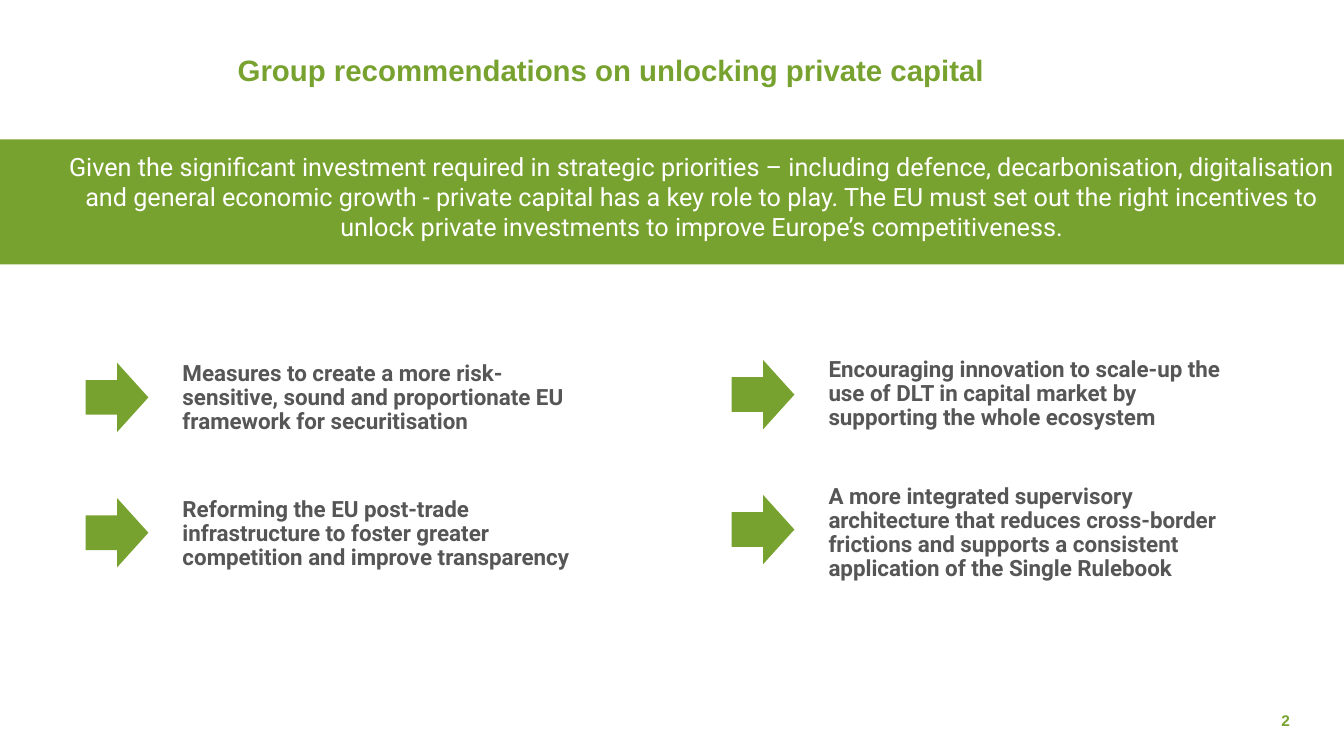
import dataclasses
import typing

import pptx
import pptx.dml.color
import pptx.enum.shapes
import pptx.enum.text
import pptx.oxml
import pptx.oxml.ns
import pptx.util

Cm = pptx.util.Cm
Align = pptx.enum.text.PP_ALIGN
Anchor = pptx.enum.text.MSO_ANCHOR

HUES = {"green": "78A22F", "gray": "565656", "white": "FFFFFF"}
TEXT_GAP = 2.44  # from arrow's left edge to its text


@dataclasses.dataclass
class Point:
    left: float
    top: float
    text_top: float
    high: float
    text: str


POINTS = [
    Point(2.16, 9.14, 9.12, 1.85,
          "Measures to create a more risk-sensitive, sound and proportionate EU "
          "framework for securitisation"),
    Point(2.16, 12.55, 12.55, 1.85,
          "Reforming the EU post-trade infrastructure to foster greater "
          "competition and improve transparency"),
    Point(18.44, 9.07, 9.02, 1.85,
          "Encouraging innovation to scale-up the use of DLT in capital market "
          "by supporting the whole ecosystem"),
    Point(18.44, 12.47, 12.22, 2.46,
          "A more integrated supervisory architecture that reduces cross-border "
          "frictions and supports a consistent application of the Single Rulebook"),
]


def color(name: str) -> pptx.dml.color.RGBColor:
    return pptx.dml.color.RGBColor.from_string(HUES[name])


def place(shape: typing.Any, left: float, top: float, wide: float, high: float) -> None:
    shape.left, shape.top = Cm(left), Cm(top)
    shape.width, shape.height = Cm(wide), Cm(high)


def write(shape: typing.Any, text: str, font: str, size: float, hue: str,
          bold: bool = True, align: Align = Align.LEFT, anchor: Anchor = Anchor.TOP,
          line: float = 1.0, inset: tuple[float, float] = (0, 0)) -> None:
    frame = shape.text_frame
    frame.word_wrap = True
    frame.auto_size = pptx.enum.text.MSO_AUTO_SIZE.NONE
    frame.vertical_anchor = anchor
    frame.margin_left, frame.margin_top = Cm(inset[0]), Cm(inset[1])
    frame.margin_right = frame.margin_bottom = 0
    para = frame.paragraphs[0]
    para.alignment = align
    para.line_spacing = line
    para.space_before = pptx.util.Pt(0)
    run = para.add_run()
    run.text = text
    run.font.name = font
    run.font.size = pptx.util.Pt(size)
    run.font.bold = bold
    run.font.color.rgb = color(hue)


def clear_bullet(shape: typing.Any) -> None:
    props = shape.text_frame.paragraphs[0]._p.get_or_add_pPr()
    props.set("marL", "0")
    props.set("indent", "0")
    props.append(pptx.oxml.parse_xml(
        f"<a:buNone {pptx.oxml.ns.nsdecls('a')}/>"))


def add_point(slide: typing.Any, point: Point) -> None:
    arrow = slide.shapes.add_shape(
        pptx.enum.shapes.MSO_SHAPE.RIGHT_ARROW,
        Cm(point.left), Cm(point.top), Cm(1.58), Cm(1.75))
    arrow.shadow.inherit = False
    arrow.fill.solid()
    arrow.fill.fore_color.rgb = color("green")
    arrow.line.fill.background()
    box = slide.shapes.add_textbox(
        Cm(point.left + TEXT_GAP), Cm(point.text_top), Cm(10.39), Cm(point.high))
    write(box, point.text, "Roboto", 16, "gray", line=0.9)


def main() -> None:
    deck = pptx.Presentation()
    deck.slide_width, deck.slide_height = Cm(33.87), Cm(19.05)
    slide = deck.slides.add_slide(deck.slide_layouts[1])

    # Title
    title = slide.shapes.title
    place(title, 5.99, 0.99, 26.37, 1.63)
    write(title, "Group recommendations on unlocking private capital",
          "Arial", 21, "green", anchor=Anchor.MIDDLE, line=0.9)

    # Key message band
    band = slide.placeholders[1]
    place(band, 0, 3.51, 33.87, 3.15)
    band.fill.solid()
    band.fill.fore_color.rgb = color("green")
    clear_bullet(band)
    write(band,
          "Given the significant investment required in strategic priorities – "
          "including defence, decarbonisation, digitalisation and general economic "
          "growth - private capital has a key role to play. The EU must set out the "
          "right incentives to unlock private investments to improve Europe’s "
          "competitiveness.",
          "Roboto", 18, "white", bold=False, align=Align.CENTER, inset=(1.5, 0.3))

    # Recommendations
    for point in POINTS:
        add_point(slide, point)

    # Page number
    page = slide.shapes.add_textbox(Cm(32), Cm(17.81), Cm(0.51), Cm(0.71))
    write(page, "2", "Arial", 11, "green", align=Align.RIGHT, anchor=Anchor.MIDDLE)

    deck.save("out.pptx")


if __name__ == "__main__":
    main()
